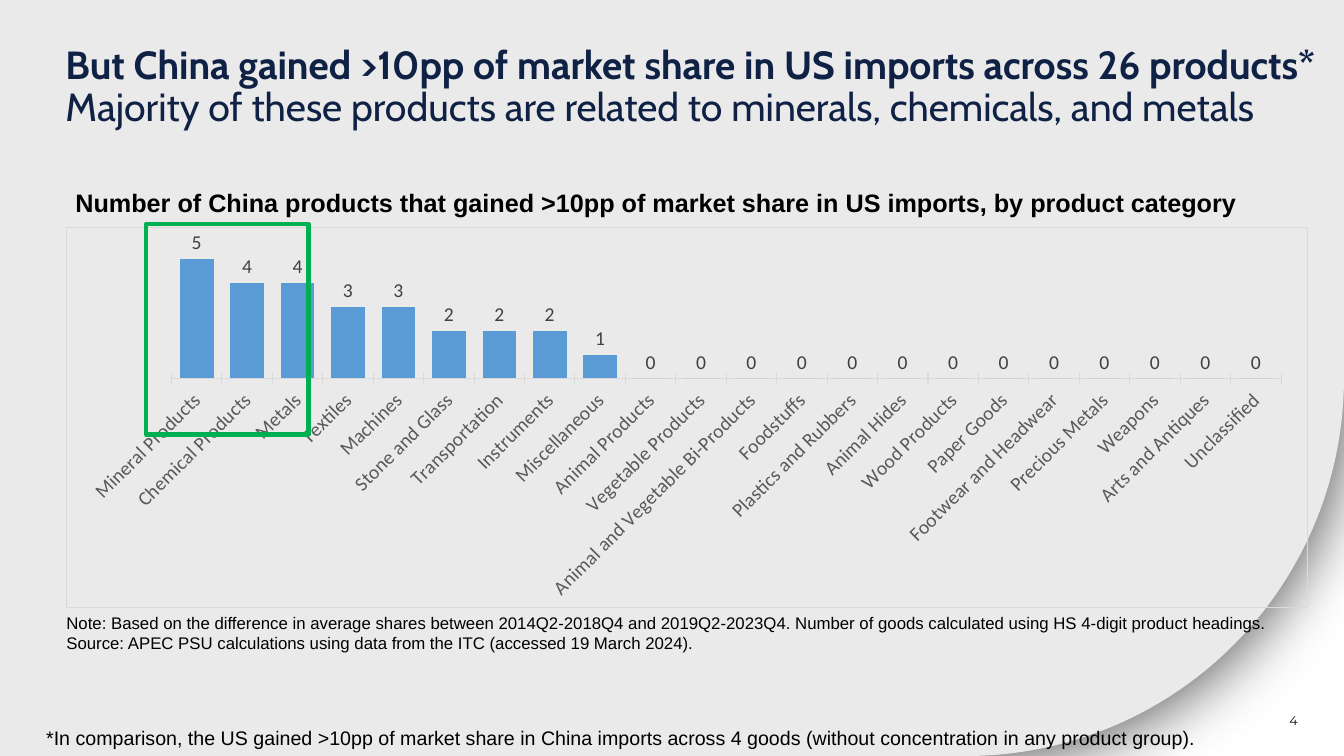
from lxml.etree import SubElement
from pptx import Presentation
from pptx.chart.data import CategoryChartData
from pptx.dml.color import RGBColor
from pptx.enum.chart import XL_CHART_TYPE as ChartType, XL_LABEL_POSITION as LabelPos
from pptx.enum.chart import XL_TICK_LABEL_POSITION as TickLabelPos, XL_TICK_MARK as TickMark
from pptx.enum.shapes import MSO_SHAPE as Preset
from pptx.enum.text import MSO_ANCHOR as Anchor, PP_ALIGN as Align
from pptx.oxml import parse_xml
from pptx.oxml.ns import nsdecls, qn
from pptx.util import Inches, Pt

NAVY, BLACK, GRID, BAR, GREEN = "0F2144", "000000", "D9D9D9", "5B9BD5", "00B050"

PRODUCT_COUNTS = {
    "Mineral Products": 5, "Chemical Products": 4, "Metals": 4, "Textiles": 3,
    "Machines": 3, "Stone and Glass": 2, "Transportation": 2, "Instruments": 2,
    "Miscellaneous": 1, "Animal Products": 0, "Vegetable Products": 0,
    "Animal and Vegetable Bi-Products": 0, "Foodstuffs": 0,
    "Plastics and Rubbers": 0, "Animal Hides": 0, "Wood Products": 0,
    "Paper Goods": 0, "Footwear and Headwear": 0, "Precious Metals": 0,
    "Weapons": 0, "Arts and Antiques": 0, "Unclassified": 0,
}


def color(code):
    return RGBColor.from_string(code)


def style_font(font, size, code, name, bold=False):
    font.size, font.name, font.bold = Pt(size), name, bold
    font.color.rgb = color(code)


class SlideBuilder:
    def __init__(self, slide, font="Arial", chart_font="Calibri"):
        self.slide = slide
        self.font = font
        self.chart_font = chart_font

    def shape(self, preset, left, top, width, height, fill=None, line=None, weight=3):
        shape = self.slide.shapes.add_shape(
            preset, Inches(left), Inches(top), Inches(width), Inches(height))
        shape.shadow.inherit = False
        if fill:
            shape.fill.solid()
            shape.fill.fore_color.rgb = color(fill)
        else:
            shape.fill.background()
        if line:
            shape.line.color.rgb = color(line)
            shape.line.width = Pt(weight)
        else:
            shape.line.fill.background()
        return shape

    def page_curl(self):
        page = self.shape(Preset.ROUND_1_RECTANGLE, 0, 0, 13.33, 7.5, fill="EAEAEA")
        page.adjustments[0] = 0.5
        page.rotation = 180
        properties = page.element.spPr
        properties.find(qn("a:xfrm")).set("flipH", "1")
        effects = properties.find(qn("a:effectLst"))
        shadow = SubElement(effects, qn("a:outerShdw"), blurRad=str(Pt(50)),
                            dist=str(Pt(3)), dir="2700000", algn="tl", rotWithShape="0")
        tint = SubElement(shadow, qn("a:srgbClr"), val=BLACK)
        SubElement(tint, qn("a:alpha"), val="70000")

    def text(self, left, top, width, height, lines, size, code=BLACK, font=None,
             align=Align.LEFT, anchor=Anchor.TOP, inset=True, spacing=None):
        box = self.slide.shapes.add_textbox(
            Inches(left), Inches(top), Inches(width), Inches(height))
        frame = box.text_frame
        frame.word_wrap = True
        frame.vertical_anchor = anchor
        if not inset:
            frame.margin_left = frame.margin_right = 0
            frame.margin_top = frame.margin_bottom = 0
        paragraph = frame.paragraphs[0]
        paragraph.alignment = align
        paragraph.line_spacing = spacing
        style_font(paragraph.font, size, code, font or self.font)
        for index, (words, bold) in enumerate(lines):
            if index:
                paragraph.add_line_break()
            run = paragraph.add_run()
            run.text = words
            style_font(run.font, size, code, font or self.font, bold)

    def column_chart(self, left, top, width, height, counts):
        data = CategoryChartData()
        data.categories = list(counts)
        data.add_series("Series 1", list(counts.values()))
        chart = self.slide.shapes.add_chart(
            ChartType.COLUMN_CLUSTERED, Inches(left), Inches(top),
            Inches(width), Inches(height), data).chart
        chart.has_legend = False
        chart.has_title = False
        style_font(chart.font, 14, BLACK, self.chart_font)

        values = chart.value_axis
        values.minimum_scale, values.maximum_scale = 0, 6
        values.has_major_gridlines = False
        values.visible = False

        categories = chart.category_axis
        categories.major_tick_mark = TickMark.CROSS
        categories.tick_label_position = TickLabelPos.LOW
        categories.format.line.color.rgb = color(GRID)
        categories.format.line.width = Pt(0.75)
        style_font(categories.tick_labels.font, 14, "595959", self.chart_font)
        label_body = categories._element.find(qn("c:txPr")).find(qn("a:bodyPr"))
        label_body.set("rot", "-2700000")
        label_body.set("vert", "horz")

        plot = chart.plots[0]
        plot.gap_width, plot.overlap = 50, -27
        plot.vary_by_categories = False
        columns = plot.series[0]
        columns.format.fill.solid()
        columns.format.fill.fore_color.rgb = color(BAR)
        labels = columns.data_labels
        labels.show_value = True
        labels.position = LabelPos.OUTSIDE_END
        style_font(labels.font, 14, "404040", self.chart_font)
        self.frame_chart(chart)

    def frame_chart(self, chart):
        root = chart._chartSpace
        area = root.find(qn("c:chart")).find(qn("c:plotArea"))
        for old in area.findall(qn("c:layout")):
            area.remove(old)
        layout = parse_xml(f"<c:layout {nsdecls('c')}/>")
        area.insert(0, layout)
        manual = SubElement(layout, qn("c:manualLayout"))
        for tag, value in (("layoutTarget", "inner"), ("xMode", "edge"),
                           ("yMode", "edge"), ("x", "0.085"), ("y", "0.02"),
                           ("w", "0.894"), ("h", "0.378")):
            SubElement(manual, qn(f"c:{tag}"), val=value)
        border = parse_xml(
            f'<c:spPr {nsdecls("c", "a")}><a:noFill/><a:ln w="{Pt(0.75)}"><a:solidFill>'
            f'<a:srgbClr val="{GRID}"/></a:solidFill></a:ln></c:spPr>')
        root.find(qn("c:chart")).addnext(border)


def main():
    deck = Presentation()
    deck.slide_width, deck.slide_height = Inches(13.33), Inches(7.5)
    page = SlideBuilder(deck.slides.add_slide(deck.slide_layouts[6]))
    page.page_curl()
    page.text(9.97, 6.95, 3, 0.4, [("4", False)], 9, "020C1C", "Montserrat",
              align=Align.RIGHT, anchor=Anchor.MIDDLE)
    page.text(0.65, 0.45, 12.5, 1.16, [
        ("But China gained >10pp of market share in US imports across 26 products*", True),
        ("Majority of these products are related to minerals, chemicals, and metals", False),
    ], 28, NAVY, "Cabin", inset=False, spacing=0.9)
    page.text(0.36, 7.15, 12.13, 0.4, [
        ("*In comparison, the US gained >10pp of market share in China imports "
         "across 4 goods (without concentration in any product group).", False)], 14)
    page.column_chart(0.65, 2.25, 12.32, 3.78, PRODUCT_COUNTS)
    page.text(0.65, 1.81, 12.03, 0.37, [
        ("Number of China products that gained >10pp of market share in US imports, "
         "by product category", True)], 18)
    page.text(0.56, 6.03, 12.12, 0.55, [
        ("Note: Based on the difference in average shares between 2014Q2-2018Q4 and "
         "2019Q2-2023Q4. Number of goods calculated using HS 4-digit product headings.", False),
        ("Source: APEC PSU calculations using data from the ITC "
         "(accessed 19 March 2024).", False)], 12)
    page.shape(Preset.RECTANGLE, 1.45, 2.22, 1.61, 2.09, line=GREEN)
    deck.save("out.pptx")


if __name__ == "__main__":
    main()
